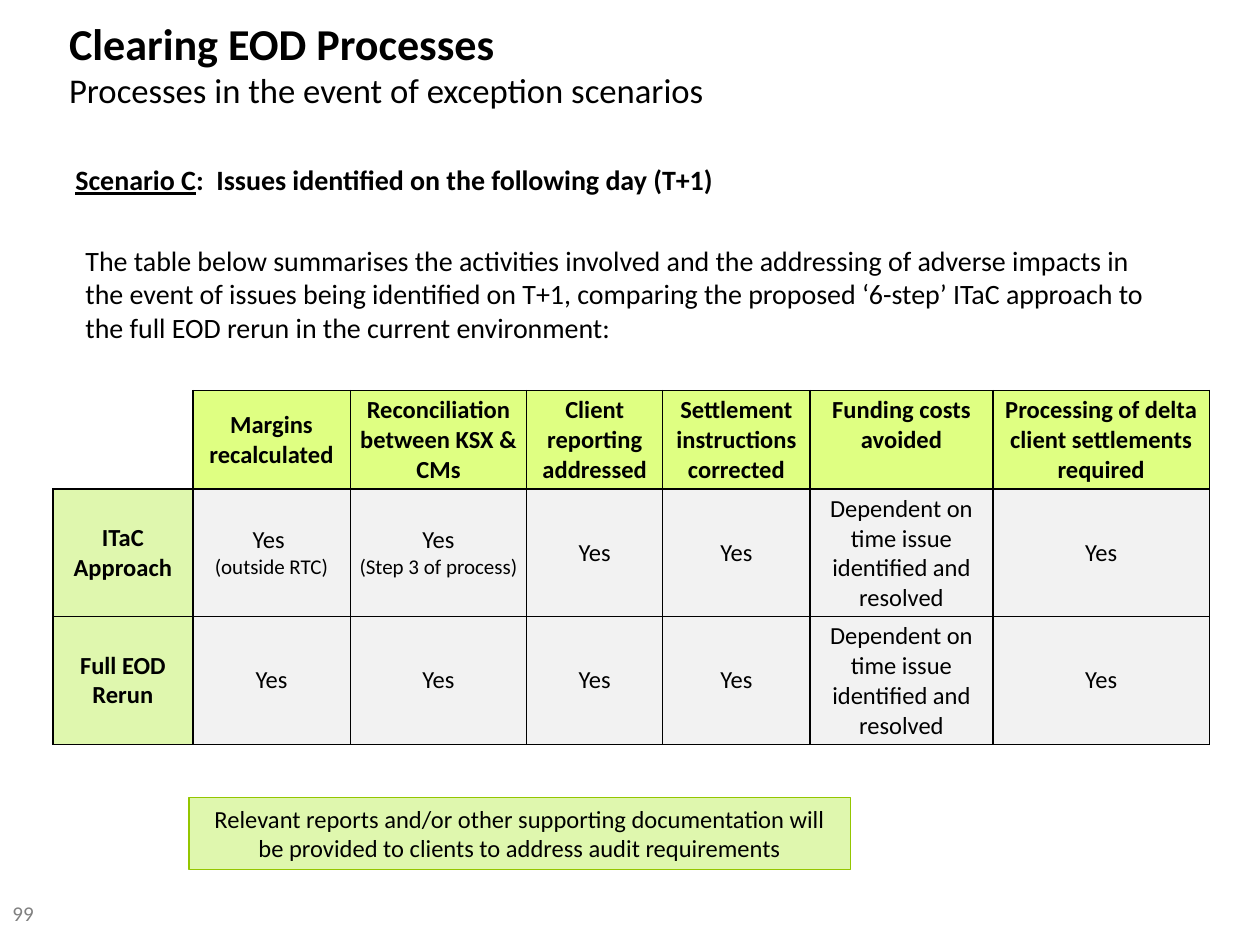
import pptx
import pptx.dml.color
import pptx.enum.shapes
import pptx.enum.text
import pptx.oxml
import pptx.oxml.ns
import pptx.util

Inches = pptx.util.Inches
ALIGN = pptx.enum.text.PP_ALIGN
ANCHOR = pptx.enum.text.MSO_ANCHOR


def rgb(hex_string):
    return pptx.dml.color.RGBColor.from_string(hex_string)


def write(frame, paragraphs, align=ALIGN.LEFT, color="000000"):
    """Fill a text frame from lists of (text, size, font attributes) runs."""
    frame.word_wrap = True
    for index, runs in enumerate(paragraphs):
        paragraph = frame.paragraphs[0] if index == 0 else frame.add_paragraph()
        paragraph.alignment = align
        for text, size, attributes in runs:
            run = paragraph.add_run()
            run.text = text.rstrip("\n")
            run.font.color.rgb = rgb(color)
            values = {"name": "Calibri", "size": pptx.util.Pt(size), **attributes}
            for name, value in values.items():
                setattr(run.font, name, value)
            if text.endswith("\n"):
                paragraph.add_line_break()


prs = pptx.Presentation()
prs.slide_width, prs.slide_height = Inches(10), Inches(7.5)
slide = prs.slides.add_slide(prs.slide_layouts[6])
bold = {"bold": True}

# Page number, heading, scenario and introduction
texts = [
    ((0, 7.1, 0.59, 0.4), "808080", [("99", 12, {})]),
    ((0.45, 0.08, 7.3, 0.82), "000000", [
        ("Clearing EOD Processes\n", 25.2, bold),
        ("Processes in the event of exception scenarios", 19.8, {})]),
    ((0.5, 1.24, 8.92, 0.37), "000000", [
        ("Scenario C", 16, {"bold": True, "underline": True}),
        (":  Issues identified on the following day (T+1)", 16, bold)]),
    ((0.58, 1.88, 8.75, 0.91), "000000", [
        ("The table below summarises the activities involved and the addressing of "
         "adverse impacts in the event of issues being identified on T+1, comparing "
         "the proposed ‘6-step’ ITaC approach to the full EOD rerun in the current "
         "environment:", 16, {})]),
]
for position, color, runs in texts:
    box = slide.shapes.add_textbox(*map(Inches, position))
    write(box.text_frame, [runs], color=color)

# Comparison of the two approaches
dependent = "Dependent on time issue identified and resolved"
rows = [
    ["", "Margins recalculated", "Reconciliation between KSX & CMs",
     "Client reporting addressed", "Settlement instructions corrected",
     "Funding costs avoided", "Processing of delta client settlements required"],
    ["ITaC Approach", "Yes |(outside RTC)", "Yes|(Step 3 of process)",
     "Yes", "Yes", dependent, "Yes"],
    ["Full EOD Rerun", "Yes", "Yes", "Yes", "Yes", dependent, "Yes"],
]
column_widths = [1.11, 1.25, 1.4, 1.08, 1.17, 1.45, 1.72]
row_heights = [0.78, 1.01, 1.01]
comparison = slide.shapes.add_table(
    len(rows), len(column_widths), Inches(0.42), Inches(3.1),
    Inches(sum(column_widths)), Inches(sum(row_heights))).table
comparison.first_row = comparison.horz_banding = False
for column, width in zip(comparison.columns, column_widths):
    column.width = Inches(width)
for row, height in zip(comparison.rows, row_heights):
    row.height = Inches(height)

black_line = '<a:solidFill><a:srgbClr val="000000"/></a:solidFill>'
for r, labels in enumerate(rows):
    for c, label in enumerate(labels):
        cell = comparison.cell(r, c)
        corner = r == 0 and c == 0
        if corner:
            fill = "FFFFFF"
        elif r == 0:
            fill = "DFFF82"
        else:
            fill = "DFF7AE" if c == 0 else "F2F2F2"
        cell.fill.solid()
        cell.fill.fore_color.rgb = rgb(fill)
        for side in ("left", "right", "top", "bottom"):
            setattr(cell, f"margin_{side}", Inches(0.04))
        top_aligned = label == "Funding costs avoided"
        cell.vertical_anchor = ANCHOR.TOP if top_aligned else ANCHOR.MIDDLE
        if label:
            style = {"bold": r == 0 or c == 0}
            write(cell.text_frame,
                  [[(line, 12 if line.startswith("(") else 14, style)]
                   for line in label.split("|")], ALIGN.CENTER)
        properties = cell._tc.get_or_add_tcPr()
        for index, side in enumerate("LRTB"):
            stroke = "<a:noFill/>" if corner and side in "LT" else black_line
            properties.insert(index, pptx.oxml.parse_xml(
                f'<a:ln{side} {pptx.oxml.ns.nsdecls("a")} w="12700">{stroke}</a:ln{side}>'))

# Audit note
note = slide.shapes.add_shape(
    pptx.enum.shapes.MSO_SHAPE.RECTANGLE, *map(Inches, (1.5, 6.33, 5.25, 0.57)))
note.shadow.inherit = False
note.fill.solid()
note.fill.fore_color.rgb = rgb("DFF7AE")
note.line.color.rgb = rgb("94C600")
note.line.width = pptx.util.Pt(0.75)
write(note.text_frame,
      [[("Relevant reports and/or other supporting documentation will be provided "
         "to clients to address audit requirements", 14, {})]], ALIGN.CENTER)

prs.save("out.pptx")
